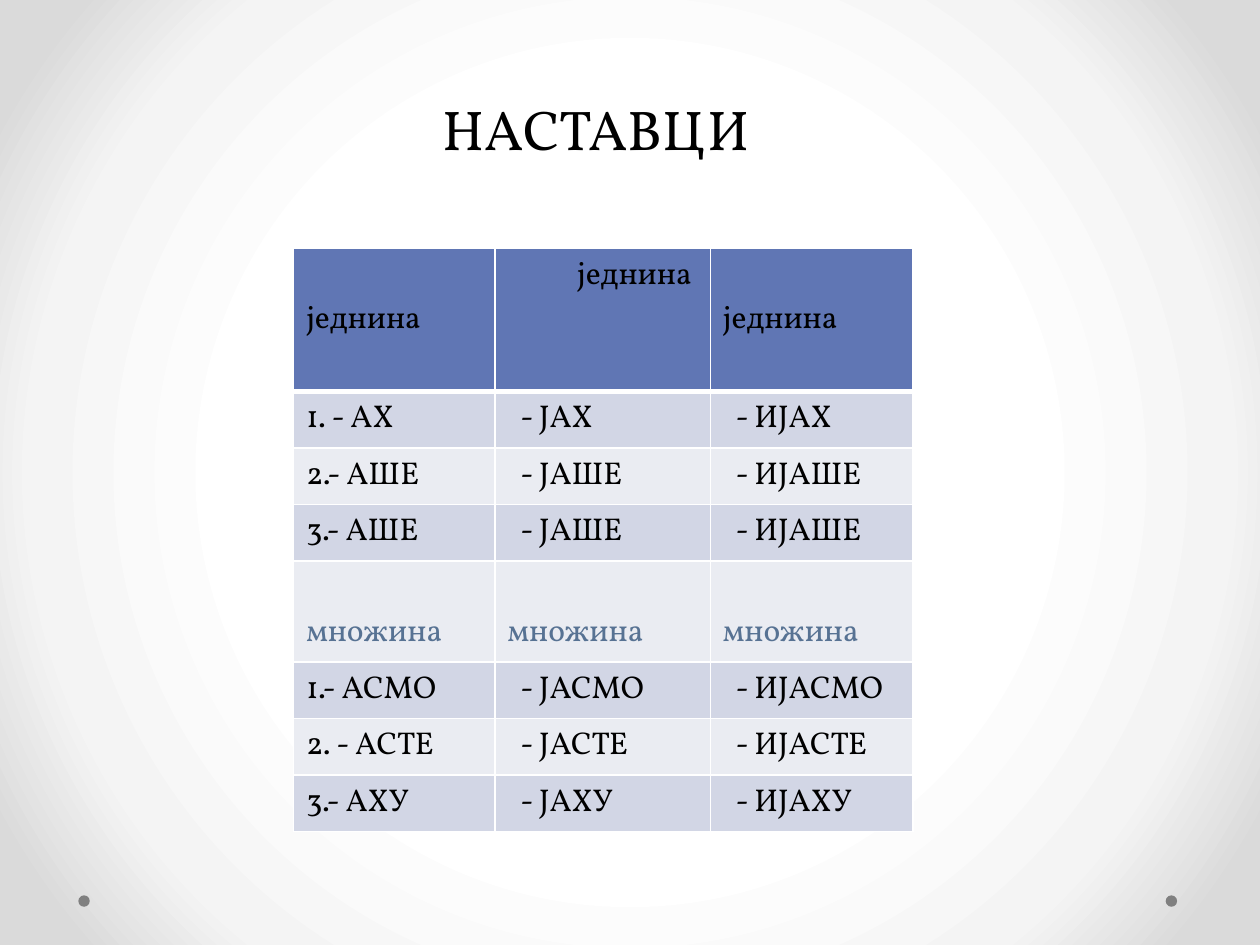
from pptx import Presentation
from pptx.dml.color import RGBColor as RGB
from pptx.enum.shapes import MSO_SHAPE as SHAPE
from pptx.enum.text import MSO_ANCHOR as ANCHOR, PP_ALIGN as ALIGN
from pptx.oxml import parse_xml
from pptx.oxml.ns import nsdecls
from pptx.util import Cm, Pt

THEME = {
    "font": "Vollkorn", "title": 32, "body": 18, "leading": 58,
    "text": "000000", "plural": "577293", "header": "6076B4",
    "bands": ("EAECF2", "D2D6E5"), "border": "FFFFFF", "dot": "808080",
    "glow": ((50, "FFFFFF"), (76, "F4F4F4"), (92, "DADADA")),
}


def write(p, text, size, color):
    r = p.add_run()
    r.text = text
    fmt = {"name": THEME["font"], "size": Pt(size), "bold": False}
    for key, value in fmt.items():
        setattr(r.font, key, value)
    r.font.color.rgb = RGB.from_string(color)


def add_border(cell, side, width):
    cell._tc.get_or_add_tcPr().append(parse_xml(
        f'<a:ln{side} {nsdecls("a")} w="{Pt(width)}"><a:solidFill>'
        f'<a:srgbClr val="{THEME["border"]}"/></a:solidFill></a:ln{side}>'))


prs = Presentation()
prs.slide_width, prs.slide_height = Cm(25.4), Cm(19.05)
s = prs.slides.add_slide(prs.slide_layouts[6])

stops = "".join(f'<a:gs pos="{pos * 1000}"><a:srgbClr val="{color}"/></a:gs>'
                for pos, color in THEME["glow"])
s._element.cSld.insert(0, parse_xml(
    f'<p:bg {nsdecls("p", "a")}><p:bgPr><a:gradFill rotWithShape="1">'
    f'<a:gsLst>{stops}</a:gsLst><a:path path="circle">'
    '<a:fillToRect l="50000" t="50000" r="50000" b="50000"/></a:path>'
    '</a:gradFill><a:effectLst/></p:bgPr></p:bg>'))

for left in (23.5, 1.58):
    sp = s.shapes.add_shape(SHAPE.OVAL, Cm(left), Cm(18.05), Cm(0.23), Cm(0.23))
    sp.shadow.inherit = False
    sp.fill.solid()
    sp.fill.fore_color.rgb = RGB.from_string(THEME["dot"])
    sp.line.fill.background()

tf = s.shapes.add_textbox(Cm(1.27), Cm(0), Cm(22.86), Cm(3.38)).text_frame
frame = {"word_wrap": True, "vertical_anchor": ANCHOR.BOTTOM, "margin_right": Cm(1.62)}
for key, value in frame.items():
    setattr(tf, key, value)
p = tf.paragraphs[0]
p.alignment = ALIGN.CENTER
p.line_spacing = Pt(THEME["leading"])
write(p, "НАСТАВЦИ", THEME["title"], THEME["text"])

HEADER, PLURAL = 0, 4
rows = [
    ("једнина",) * 3,
    ("1. - АХ", "- ЈАХ", "- ИЈАХ"),
    ("2.- АШЕ", "- ЈАШЕ", "- ИЈАШЕ"),
    ("3.- АШЕ", "- ЈАШЕ", "- ИЈАШЕ"),
    ("множина",) * 3,
    ("1.- АСМО", "- ЈАСМО", "- ИЈАСМО"),
    ("2. - АСТЕ", "- ЈАСТЕ", "- ИЈАСТЕ"),
    ("3.- АХУ", "- ЈАХУ", "- ИЈАХУ"),
]
widths = (4.06, 4.34, 4.09)
heights = {HEADER: 2.88, PLURAL: 2.04}
table = s.shapes.add_table(len(rows), len(widths), Cm(5.92), Cm(5.01),
                           Cm(sum(widths)), Cm(11.76)).table
table.first_row = table.horz_banding = False
for column, width in zip(table.columns, widths):
    column.width = Cm(width)

for i, words in enumerate(rows):
    table.rows[i].height = Cm(heights.get(i, 1.14))
    for j, word in enumerate(words):
        cell = table.cell(i, j)
        color, fill = THEME["text"], THEME["bands"][i % 2]
        if i == HEADER:
            fill = THEME["header"]
            cell.vertical_anchor = ANCHOR.TOP if j == 1 else ANCHOR.MIDDLE
            cell.margin_left = Cm(1.65 if j == 1 else 0.25)
        elif i == PLURAL:
            color = THEME["plural"]
            cell.vertical_anchor = ANCHOR.BOTTOM
        elif j:
            cell.margin_left = Cm(0.51)
        for side in "LRTB":
            under_header = (i, side) in ((HEADER, "B"), (HEADER + 1, "T"))
            add_border(cell, side, 3 if under_header else 1)
        cell.fill.solid()
        cell.fill.fore_color.rgb = RGB.from_string(fill)
        write(cell.text_frame.paragraphs[0], word, THEME["body"], color)

prs.save("out.pptx")
